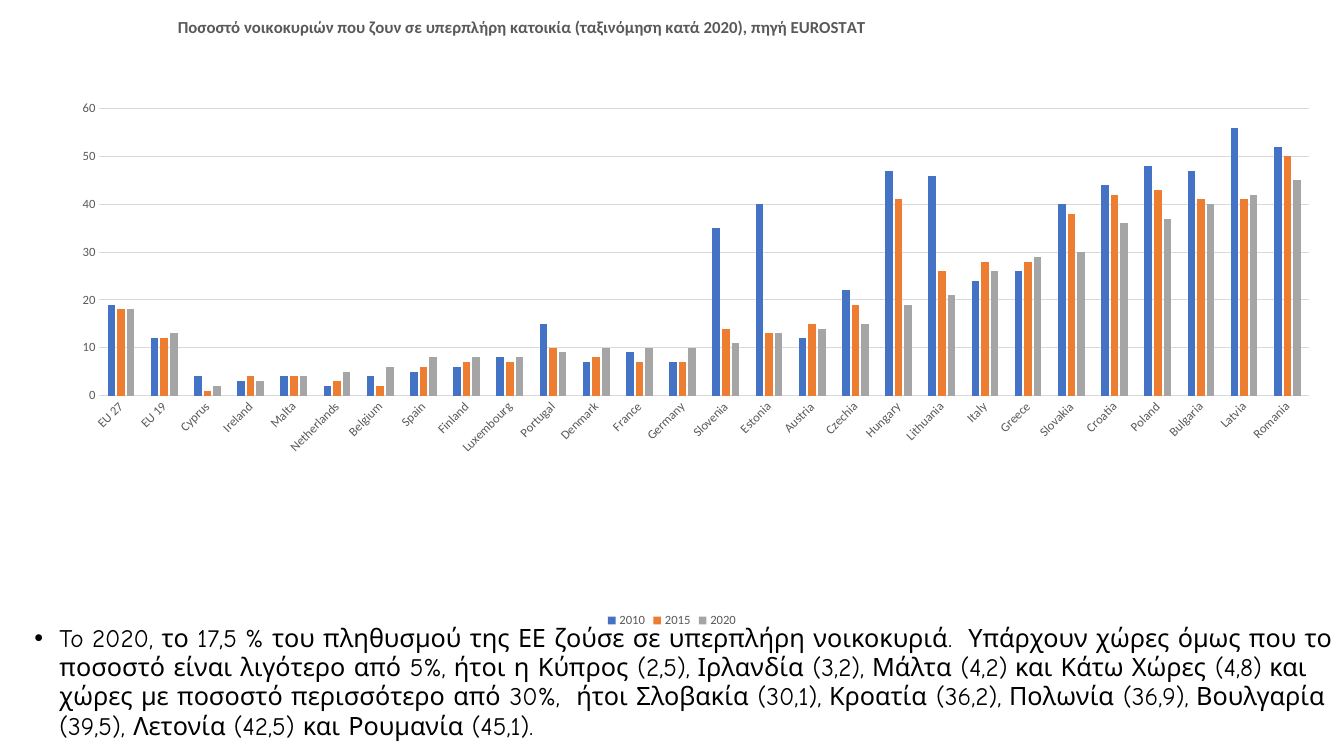
from pptx import Presentation, oxml as ox
from pptx.chart import data as cd
from pptx.dml import color as dc
from pptx.enum import chart as ec, text as et
from pptx.oxml import ns
from pptx.util import Pt

TITLE = "Ποσοστό νοικοκυριών που ζουν σε υπερπλήρη κατοικία (ταξινόμηση κατά 2020), πηγή EUROSTAT"
NOTE = (
    "To 2020, το 17,5\u00a0% του πληθυσμού της ΕΕ ζούσε σε υπερπλήρη νοικοκυριά.  "
    "Υπάρχουν χώρες όμως που το ποσοστό είναι λιγότερο από 5%, ήτοι η Κύπρος (2,5), "
    "Ιρλανδία (3,2), Μάλτα (4,2) και Κάτω Χώρες (4,8) και χώρες με ποσοστό περισσότερο "
    "από 30%,  ήτοι Σλοβακία (30,1), Κροατία (36,2), Πολωνία (36,9), Βουλγαρία (39,5), "
    "Λετονία (42,5) και Ρουμανία (45,1)."
).replace("\u00a0", " ")
LANDS = [
    "EU 27", "EU 19", "Cyprus", "Ireland", "Malta", "Netherlands", "Belgium",
    "Spain", "Finland", "Luxembourg", "Portugal", "Denmark", "France", "Germany",
    "Slovenia", "Estonia", "Austria", "Czechia", "Hungary", "Lithuania", "Italy",
    "Greece", "Slovakia", "Croatia", "Poland", "Bulgaria", "Latvia", "Romania",
]
YEARS = {
    "2010": ("4472C4", [19, 12, 4, 3, 4, 2, 4, 5, 6, 8, 15, 7, 9, 7, 35, 40, 12,
                        22, 47, 46, 24, 26, 40, 44, 48, 47, 56, 52]),
    "2015": ("ED7D31", [18, 12, 1, 4, 4, 3, 2, 6, 7, 7, 10, 8, 7, 7, 14, 13, 15,
                        19, 41, 26, 28, 28, 38, 42, 43, 41, 41, 50]),
    "2020": ("A5A5A5", [18, 13, 2, 3, 4, 5, 6, 8, 8, 8, 9, 10, 10, 10, 11, 13, 14,
                        15, 19, 21, 26, 29, 30, 36, 37, 40, 42, 45]),
}
GREY, RULE = "595959", "D9D9D9"


def rgb(code):
    """Turn a hex string into a colour."""
    return dc.RGBColor.from_string(code)


def style(font, size, code, face="Calibri", bold=False):
    """Set the look of a font."""
    font.size, font.name, font.bold = Pt(size), face, bold
    font.color.rgb = rgb(code)


def rule(line):
    """Draw a line as a thin grey rule."""
    line.width = Pt(0.75)
    line.color.rgb = rgb(RULE)


def place(part, index, inner=False, **box):
    """Fix a chart part at fractions of the chart area."""
    for old in part.findall(ns.qn("c:layout")):
        part.remove(old)
    tags = '<c:layoutTarget val="inner"/>' if inner else ""
    tags += "".join(f'<c:{key}Mode val="edge"/>' for key in "xy")
    tags += "".join(f'<c:{key} val="{val}"/>' for key, val in box.items())
    part.insert(index, ox.parse_xml(
        f'<c:layout {ns.nsdecls("c")}><c:manualLayout>{tags}</c:manualLayout></c:layout>'))


def head(chart):
    """Write the chart title."""
    title = chart.chart_title
    title.text_frame.text = TITLE
    style(title.text_frame.paragraphs[0].runs[0].font, 12, GREY, bold=True)
    title.include_in_layout = False
    place(title._element, 1, x=0.13, y=0.02)


def axes(chart):
    """Format both axes and the grid."""
    lands, share = chart.category_axis, chart.value_axis
    for axis in (lands, share):
        axis.major_tick_mark = axis.minor_tick_mark = ec.XL_TICK_MARK.NONE
        style(axis.tick_labels.font, 9, GREY)
    rule(lands.format.line)
    body = lands._element.find(ns.qn("c:txPr")).find(ns.qn("a:bodyPr"))
    body.set("rot", "-2700000")
    body.set("vert", "horz")
    share.minimum_scale, share.maximum_scale, share.major_unit = 0, 60, 10
    share.tick_labels.number_format = "#,##0"
    share.tick_labels.number_format_is_linked = False
    share.format.line.fill.background()
    rule(share.major_gridlines.format.line)


def graph(slide, left, top, width, height):
    """Build the column chart in its box."""
    data = cd.CategoryChartData()
    data.categories = LANDS
    for year, (_, vals) in YEARS.items():
        data.add_series(year, vals)
    chart = slide.shapes.add_chart(
        ec.XL_CHART_TYPE.COLUMN_CLUSTERED,
        Pt(left), Pt(top), Pt(width), Pt(height), data).chart
    style(chart.font, 10, "000000")
    plot = chart.plots[0]
    plot.gap_width, plot.overlap, plot.vary_by_categories = 219, -27, False
    for bars, (code, _) in zip(plot.series, YEARS.values()):
        bars.format.fill.solid()
        bars.format.fill.fore_color.rgb = rgb(code)
        bars.invert_if_negative = False
    head(chart)
    axes(chart)
    chart.has_legend = True
    chart.legend.position = ec.XL_LEGEND_POSITION.BOTTOM
    chart.legend.include_in_layout = False
    style(chart.legend.font, 9, GREY)
    area = chart._chartSpace.chart.plotArea
    place(area, 0, inner=True, x=0.074, y=0.172, w=0.9, h=0.454)


def note(slide, left, top, width, height):
    """Write the bulleted note in the body placeholder."""
    body = slide.placeholders[1]
    body.left, body.top, body.width, body.height = map(Pt, (left, top, width, height))
    frame = body.text_frame
    frame.text = NOTE
    frame.word_wrap = True
    frame.auto_size = et.MSO_AUTO_SIZE.NONE
    frame.vertical_anchor = et.MSO_ANCHOR.TOP
    para = frame.paragraphs[0]
    para.line_spacing = 0.97
    para.space_before, para.space_after = Pt(10), Pt(8)
    props = para._p.get_or_add_pPr()
    props.set("marL", str(Pt(18)))
    props.set("indent", str(Pt(-18)))
    props.append(ox.parse_xml(f'<a:buFont {ns.nsdecls("a")} typeface="Arial"/>'))
    props.append(ox.parse_xml(f'<a:buChar {ns.nsdecls("a")} char="•"/>'))
    style(para.runs[0].font, 18, "000000", "Comic Neue")


def main():
    """Build and save the slide."""
    deck = Presentation()
    deck.slide_width, deck.slide_height = Pt(960), Pt(540)
    slide = deck.slides.add_slide(deck.slide_layouts[1])
    title = slide.shapes.title.element
    title.getparent().remove(title)
    note(slide, 17.3, 442, 943, 98)
    graph(slide, 0, 0, 960, 451.4)
    deck.save("out.pptx")


if __name__ == "__main__":
    main()
